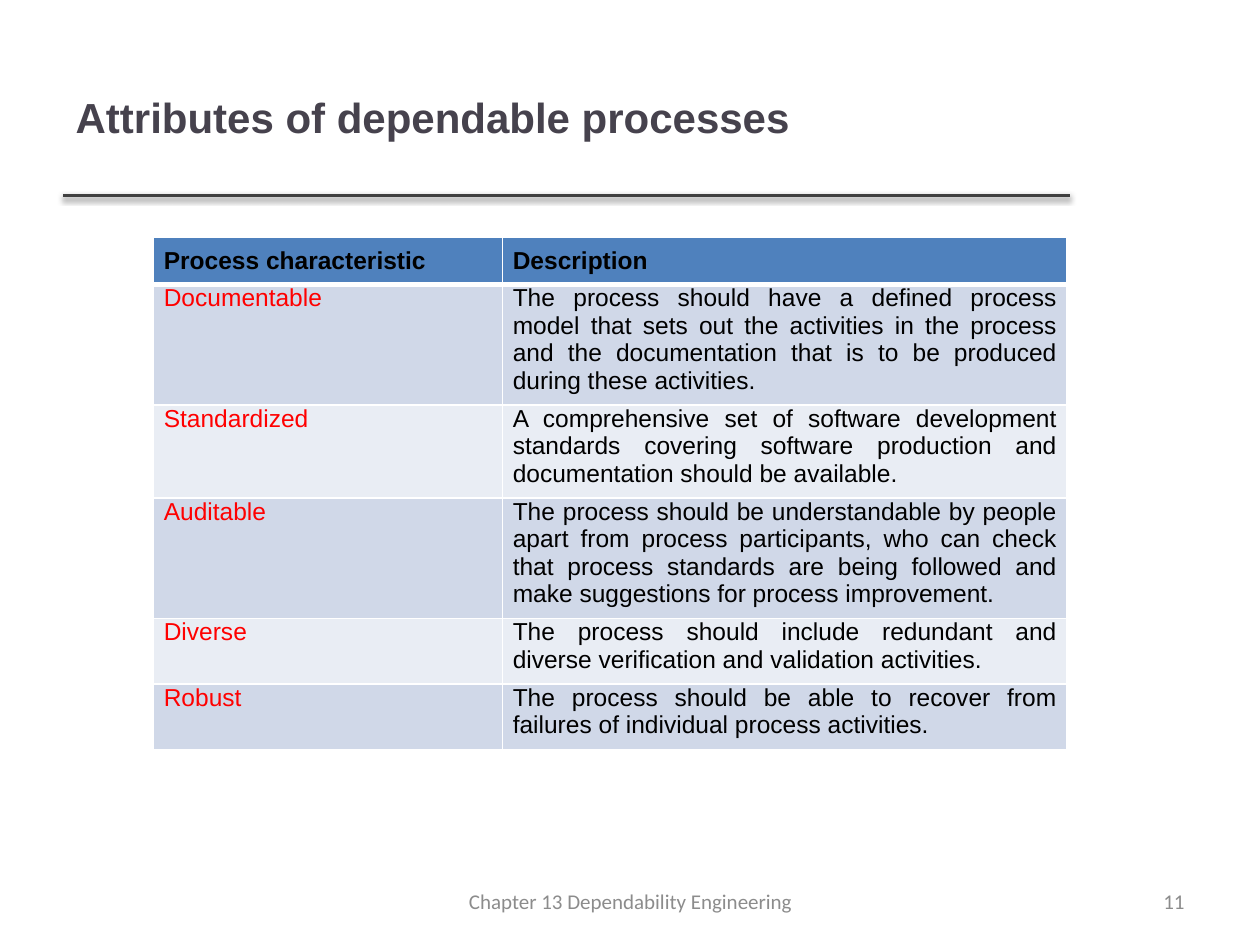
import pptx
import pptx.dml.color
import pptx.enum.shapes
import pptx.enum.text
import pptx.oxml
import pptx.oxml.ns
import pptx.util
from dataclasses import dataclass

Inches = pptx.util.Inches
Pt = pptx.util.Pt
Align = pptx.enum.text.PP_ALIGN
Anchor = pptx.enum.text.MSO_ANCHOR
NAMESPACE = pptx.oxml.ns.nsdecls("a")


@dataclass(frozen=True)
class Theme:
    heading_font: str = "Arial"
    footer_font: str = "Calibri"
    title_size: int = 24
    table_size: int = 14
    footer_size: int = 12
    title: str = "46424D"
    text: str = "000000"
    term: str = "FF0000"
    footer: str = "8C8C8C"
    rule: str = "404040"
    header_fill: str = "4F81BD"
    bands: tuple = ("D0D8E8", "E9EDF4")
    border: str = "FFFFFF"


def rgb(value):
    return pptx.dml.color.RGBColor.from_string(value)


class SlideBuilder:
    def __init__(self, deck, theme):
        self.theme = theme
        self.page = deck.slides.add_slide(deck.slide_layouts[5])

    def add_text(self, frame, text, color, align, **font_format):
        para = frame.paragraphs[0]
        para.alignment = align
        span = para.add_run()
        span.text = text
        for name, value in font_format.items():
            setattr(span.font, name, value)
        span.font.color.rgb = rgb(color)

    def place(self, box, left, top, width, height):
        for name, value in dict(left=left, top=top, width=width, height=height).items():
            setattr(box, name, Inches(value))

    def title(self, text, *area):
        box = self.page.shapes.title
        self.place(box, *area)
        frame = box.text_frame
        frame.auto_size = pptx.enum.text.MSO_AUTO_SIZE.NONE
        frame.vertical_anchor = Anchor.MIDDLE
        self.add_text(frame, text, self.theme.title, Align.LEFT, bold=True,
                      name=self.theme.heading_font, size=Pt(self.theme.title_size))

    def footer(self, text, align, *area):
        box = self.page.shapes.add_textbox(*map(Inches, area))
        frame = box.text_frame
        frame.word_wrap = True
        frame.vertical_anchor = Anchor.MIDDLE
        self.add_text(frame, text, self.theme.footer, align,
                      name=self.theme.footer_font, size=Pt(self.theme.footer_size))

    def rule(self, left, right, top):
        line = self.page.shapes.add_connector(
            pptx.enum.shapes.MSO_CONNECTOR.STRAIGHT,
            *map(Inches, (left, top, right, top)))
        line.line.color.rgb = rgb(self.theme.rule)
        line.line.width = Pt(2)
        line._element.spPr.append(pptx.oxml.parse_xml(
            f'<a:effectLst {NAMESPACE}><a:outerShdw blurRad="{Pt(3.1)}" dist="{Pt(1.6)}" '
            'dir="5400000" rotWithShape="0"><a:srgbClr val="000000">'
            '<a:alpha val="38000"/></a:srgbClr></a:outerShdw></a:effectLst>'))

    def borders(self, cell, bottom):
        properties = cell._tc.get_or_add_tcPr()
        widths = dict(lnL=1, lnR=1, lnT=1, lnB=bottom)
        for position, (tag, width) in enumerate(widths.items()):
            properties.insert(position, pptx.oxml.parse_xml(
                f'<a:{tag} {NAMESPACE} w="{Pt(width)}"><a:solidFill>'
                f'<a:srgbClr val="{self.theme.border}"/></a:solidFill></a:{tag}>'))

    def cell(self, cell, text, color, fill, header):
        margins = dict(left=0.08, right=0.08, top=0.08 if header else 0, bottom=0.08)
        for side, value in margins.items():
            setattr(cell, f"margin_{side}", Inches(value))
        cell.fill.solid()
        cell.fill.fore_color.rgb = rgb(fill)
        self.borders(cell, 3 if header else 1)
        self.add_text(cell.text_frame, text, color, Align.JUSTIFY, bold=header,
                      name=self.theme.heading_font, size=Pt(self.theme.table_size))

    def table(self, rows, left, top, widths, heights):
        grid = self.page.shapes.add_table(
            len(rows), len(widths),
            *map(Inches, (left, top, sum(widths), sum(heights)))).table
        for column, width in zip(grid.columns, widths):
            column.width = Inches(width)
        for index, (row, height) in enumerate(zip(rows, heights)):
            grid.rows[index].height = Inches(height)
            header = index == 0
            fill = self.theme.header_fill if header else self.theme.bands[(index - 1) % 2]
            for column, text in enumerate(row):
                is_term = column == 0 and not header
                color = self.theme.term if is_term else self.theme.text
                self.cell(grid.cell(index, column), text, color, fill, header)


ATTRIBUTES = [
    ("Process characteristic", "Description"),
    ("Documentable",
     "The process should have a defined process model that sets out the activities in the "
     "process and the documentation that is to be produced during these activities."),
    ("Standardized",
     "A comprehensive set of software development standards covering software production "
     "and documentation should be available."),
    ("Auditable",
     "The process should be understandable by people apart from process participants, who "
     "can check that process standards are being followed and make suggestions for process "
     "improvement."),
    ("Diverse",
     "The process should include redundant and diverse verification and validation "
     "activities."),
    ("Robust",
     "The process should be able to recover from failures of individual process activities."),
]


def main():
    deck = pptx.Presentation()
    deck.slide_width, deck.slide_height = Inches(10), Inches(7.5)
    builder = SlideBuilder(deck, Theme())

    # Heading with its rule
    builder.rule(0.5, 8.49, 1.55)
    builder.title("Attributes of dependable processes", 0.5, 0.3, 7.98, 1.25)

    # Table of process attributes
    builder.table(ATTRIBUTES, 1.22, 1.88, widths=(2.77, 4.48),
                  heights=(0.37, 0.95, 0.74, 0.95, 0.52, 0.52))

    # Page number and footer
    builder.footer("11", Align.RIGHT, 7.17, 6.95, 2.33, 0.4)
    builder.footer("Chapter 13 Dependability Engineering", Align.CENTER, 3.42, 6.95, 3.17, 0.4)

    deck.save("out.pptx")


if __name__ == "__main__":
    main()
